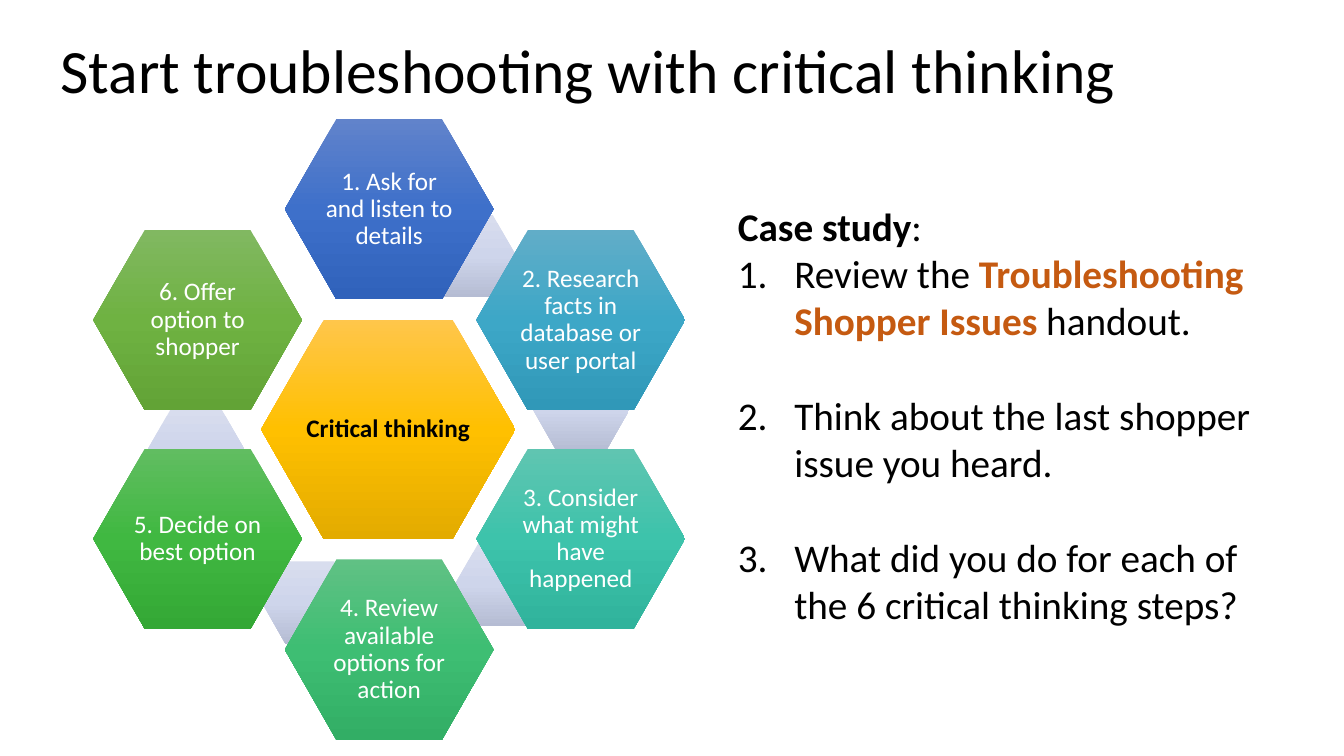
import copy

import pptx
import pptx.dml.color
import pptx.enum.shapes
import pptx.enum.text
import pptx.oxml.ns
import pptx.util
from pptx.util import Inches

BLACK, WHITE, ORANGE = "000000", "FFFFFF", "C55A11"


def color(value):
    return pptx.dml.color.RGBColor.from_string(value)


class Page:
    """Holds the slide and its shared style."""

    font = "Calibri"

    def __init__(self, deck):
        self.shapes = deck.slides.add_slide(deck.slide_layouts[6]).shapes

    def style(self, span, size, ink=BLACK, bold=False):
        span.font.name = self.font
        span.font.size = pptx.util.Pt(size)
        span.font.bold = bold
        span.font.color.rgb = color(ink)

    def gradient(self, shape, colors):
        shape.fill.gradient()
        shape.fill.gradient_angle = 270
        stop_list = next(shape.fill._xPr.iter(pptx.oxml.ns.qn("a:gsLst")))
        stop_list.append(copy.deepcopy(stop_list[0]))
        for stop, position, value in zip(shape.fill.gradient_stops, (0, 0.5, 1), colors):
            stop.position = position
            stop.color.rgb = color(value)

    def hexagon(self, left, top, width, height, colors, text="", ink=WHITE, bold=False):
        box = self.shapes.add_shape(
            pptx.enum.shapes.MSO_SHAPE.HEXAGON,
            Inches(left), Inches(top), Inches(width), Inches(height))
        box.adjustments[0] = 0.286
        box.shadow.inherit = False
        box.line.fill.background()
        self.gradient(box, colors)
        if not text:
            return
        frame = box.text_frame
        frame.margin_left = frame.margin_right = Inches(0.03)
        frame.margin_top = frame.margin_bottom = Inches(0.03)
        frame.vertical_anchor = pptx.enum.text.MSO_ANCHOR.MIDDLE
        frame.word_wrap = True
        frame.text = text
        para = frame.paragraphs[0]
        para.alignment = pptx.enum.text.PP_ALIGN.CENTER
        para.line_spacing = 0.9
        self.style(para.runs[0], 18, ink, bold)

    def text_box(self, left, top, width, height):
        box = self.shapes.add_textbox(
            Inches(left), Inches(top), Inches(width), Inches(height))
        box.text_frame.word_wrap = True
        return box.text_frame

    def title(self, text):
        frame = self.text_box(0.5, 0, 11.91, 1.45)
        frame.vertical_anchor = pptx.enum.text.MSO_ANCHOR.MIDDLE
        frame.text = text
        frame.paragraphs[0].line_spacing = 0.9
        self.style(frame.paragraphs[0].runs[0], 44)

    def number(self, para):
        properties = para._p.get_or_add_pPr()
        properties.set("marL", str(Inches(0.56)))
        properties.set("indent", str(-Inches(0.56)))
        bullet = pptx.oxml.ns.qn("a:buAutoNum")
        properties.append(properties.makeelement(bullet, {"type": "arabicPeriod"}))

    def case_study(self, heading, questions):
        frame = self.text_box(7.22, 1.96, 5.53, 4.34)
        for index, spans in enumerate([heading] + questions):
            para = frame.paragraphs[0] if index == 0 else frame.add_paragraph()
            if index > 1:
                para.space_before = pptx.util.Pt(34)
            if index > 0:
                self.number(para)
            for text, ink, bold in spans:
                span = para.add_run()
                span.text = text
                self.style(span, 28, ink, bold)


# Hexagon ring: column and row offsets from the centre, text, gradient
CENTER_X, CENTER_Y = 3.86, 4.26
COLUMN, NEAR_ROW, FAR_ROW = 1.9, 1.085, 2.185
STEP_WIDTH, STEP_HEIGHT = 2.07, 1.79
STEPS = [
    (0, -FAR_ROW, "1. Ask for and listen to details", ("6183CB", "3E70CA", "3062BB")),
    (COLUMN, -NEAR_ROW, "2. Research facts in database or user portal", ("61ADC8", "3DA7C7", "3098B8")),
    (COLUMN, NEAR_ROW, "3. Consider what might have happened", ("60C5B1", "3DC3AB", "30B39C")),
    (0, FAR_ROW, "4. Review available options for action", ("60C184", "3EBE73", "32AE65")),
    (-COLUMN, NEAR_ROW, "5. Decide on best option", ("61BD61", "40B841", "34A835")),
    (-COLUMN, -NEAR_ROW, "6. Offer option to shopper", ("81B861", "6FB242", "62A336")),
]
# Small pale hexagons that peek out behind the first five steps
LINKS = [(4.17, 2.13), (5.29, 3.66), (4.51, 5.39), (2.6, 5.57), (1.47, 4.04)]
LINK_COLORS = ("D8DDEE", "CED5EB", "B5BCD3")


def main():
    deck = pptx.Presentation()
    deck.slide_width, deck.slide_height = Inches(13.33), Inches(7.5)
    page = Page(deck)
    page.title("Start troubleshooting with critical thinking")

    # Critical thinking cycle
    page.hexagon(2.59, 3.17, 2.52, 2.18, ("FFC64B", "FFC000", "E3AB00"),
                 "Critical thinking", BLACK, True)
    for index, (across, down, text, colors) in enumerate(STEPS):
        if index < len(LINKS):
            page.hexagon(*LINKS[index], 0.95, 0.82, LINK_COLORS)
        page.hexagon(CENTER_X + across - STEP_WIDTH / 2, CENTER_Y + down - STEP_HEIGHT / 2,
                     STEP_WIDTH, STEP_HEIGHT, colors, text)

    # Case study
    page.case_study(
        [("Case study", BLACK, True), (":", BLACK, False)],
        [
            [("Review the ", BLACK, False),
             ("Troubleshooting Shopper Issues", ORANGE, True),
             (" handout.", BLACK, False)],
            [("Think about the last shopper issue you heard.", BLACK, False)],
            [("What did you do for each of the 6 critical thinking steps?", BLACK, False)],
        ])
    deck.save("out.pptx")


if __name__ == "__main__":
    main()
